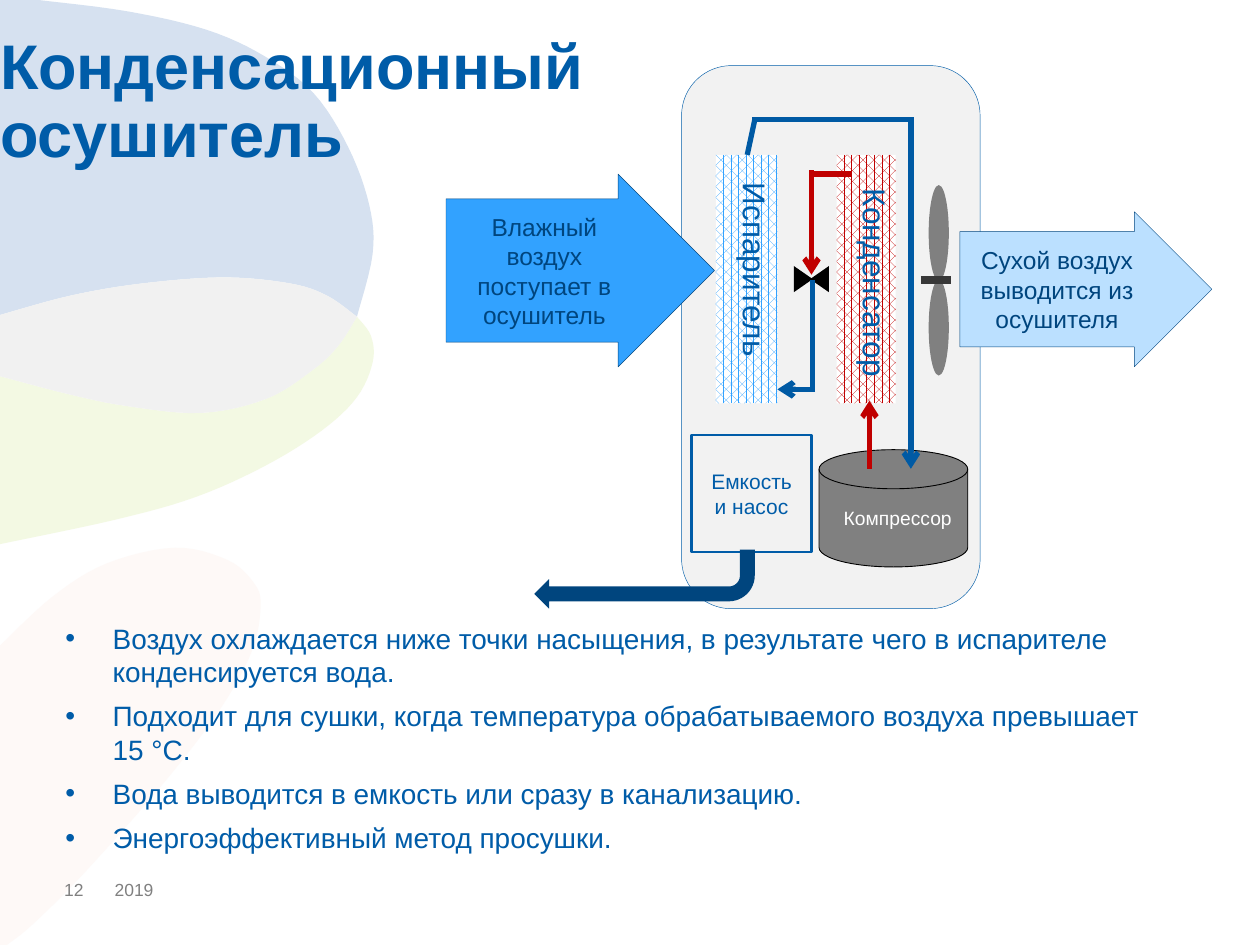
from collections import namedtuple
from dataclasses import dataclass

from lxml.etree import SubElement
from pptx import Presentation
from pptx.dml.color import RGBColor
from pptx.enum.dml import MSO_PATTERN
from pptx.enum.shapes import MSO_CONNECTOR, MSO_SHAPE as Preset
from pptx.enum.text import MSO_ANCHOR as Anchor, MSO_AUTO_SIZE as AutoSize, PP_ALIGN as Align
from pptx.oxml.ns import qn
from pptx.util import Pt

Box = namedtuple("Box", "x y w h")


@dataclass(frozen=True)
class Theme:
    font: str = "Arial"
    blue: str = "005CA8"
    pipe: str = "005AA4"
    navy: str = "00457E"
    moist: str = "32A2FF"
    dry: str = "BBE0FF"
    hot: str = "C00000"
    casing: str = "F2F2F2"
    metal: str = "808080"
    axle: str = "383838"
    black: str = "000000"
    white: str = "FFFFFF"
    petal_blue: str = "D6E1F0"
    petal_green: str = "F3F9E3"
    petal_overlap: str = "F1F1F1"
    petal_pink: str = "FEF9F7"
    title_size: float = 36
    label_size: float = 18
    body_size: float = 16
    flow_size: float = 14
    tank_size: float = 12
    compressor_size: float = 11
    footer_size: float = 10


THEME = Theme()
rgb = RGBColor.from_string


def style_font(paragraph, size, color, bold=False):
    font = paragraph.font
    font.name, font.size, font.bold = THEME.font, Pt(size), bold
    font.color.rgb = rgb(color)


def set_margins(frame, left=0, top=0, right=0, bottom=0):
    frame.margin_left, frame.margin_top = Pt(left), Pt(top)
    frame.margin_right, frame.margin_bottom = Pt(right), Pt(bottom)


def paint(shape, fill=None, line=None, width=0.25):
    shape.shadow.inherit = False
    if fill:
        shape.fill.solid()
        shape.fill.fore_color.rgb = rgb(fill)
    else:
        shape.fill.background()
    if line:
        shape.line.color.rgb, shape.line.width = rgb(line), Pt(width)
    else:
        shape.line.fill.background()


def write(shape, lines, size, color, align=Align.CENTER):
    frame = shape.text_frame
    frame.word_wrap = True
    frame.vertical_anchor = Anchor.MIDDLE
    for i, line in enumerate(lines):
        paragraph = frame.add_paragraph() if i else frame.paragraphs[0]
        paragraph.text, paragraph.alignment = line, align
        style_font(paragraph, size, color)


def add_preset(slide, origin, preset, box, fill=None, line=None, width=0.25, rotation=0):
    """Add a preset shape whose box is measured from the origin box."""
    x, y, w, h = box
    shape = slide.shapes.add_shape(preset, Pt(origin.x + x), Pt(origin.y + y), Pt(w), Pt(h))
    paint(shape, fill, line, width)
    shape.rotation = rotation
    return shape


def add_pipe(slide, origin, start, end, color, arrow=False, width=3):
    (x1, y1), (x2, y2) = start, end
    pipe = slide.shapes.add_connector(
        MSO_CONNECTOR.STRAIGHT, Pt(origin.x + x1), Pt(origin.y + y1),
        Pt(origin.x + x2), Pt(origin.y + y2))
    pipe.line.color.rgb, pipe.line.width = rgb(color), Pt(width)
    if arrow:
        SubElement(pipe.line._get_or_add_ln(), qn("a:tailEnd"), type="arrow")
    SubElement(pipe._element.spPr, qn("a:effectLst"))


def smooth(knots, steps=6):
    """Sample a Catmull-Rom curve through the knots."""
    padded = [knots[0], *knots, knots[-1]]
    curve = [knots[0]]
    for a, b, c, d in zip(padded, padded[1:], padded[2:], padded[3:]):
        for t in (step / steps for step in range(1, steps + 1)):
            curve.append(tuple(
                (2 * q + (r - p) * t + (2 * p - 5 * q + 4 * r - s) * t ** 2
                 + (3 * q - p - 3 * r + s) * t ** 3) / 2
                for p, q, r, s in zip(a, b, c, d)))
    return curve


def add_petals(slide, box):
    crown = smooth([(22, 0), (73, 6.5), (118, 17), (151, 32), (179, 53), (199, 84),
                    (211, 117), (213, 145), (204, 181)])
    upper = smooth([(0, 180), (40, 169), (81, 162), (128, 158.5), (166, 162), (187, 169),
                    (204, 181)])
    lower = smooth([(204, 181), (193, 198), (178, 212), (152, 228), (115, 236), (72, 232),
                    (38, 225), (0, 215)])
    outer = smooth([(204, 181), (212, 192), (213, 207), (204, 227), (184, 246), (152, 266),
                    (112, 284), (66, 297), (0, 311)])
    bottom = smooth([(0, 369), (30, 341), (61, 322), (100, 313), (130, 320), (145, 333),
                     (149, 346), (144, 372), (126, 405), (94, 447), (49, 498), (19, 528),
                     (4, 540)])
    for outline, color in (
            (bottom + [(0, box.h)], THEME.petal_pink),
            (outer + lower[::-1], THEME.petal_green),
            ([(0, 0)] + crown + upper[::-1], THEME.petal_blue),
            (upper + lower, THEME.petal_overlap)):
        points = [(Pt(box.x + x), Pt(box.y + y)) for x, y in outline]
        builder = slide.shapes.build_freeform(*points[0])
        builder.add_line_segments(points[1:], close=True)
        paint(builder.convert_to_shape(), color)


def place(placeholder, box):
    placeholder.left, placeholder.top = Pt(box.x), Pt(box.y)
    placeholder.width, placeholder.height = Pt(box.w), Pt(box.h)
    frame = placeholder.text_frame
    set_margins(frame)
    frame.auto_size, frame.vertical_anchor = AutoSize.NONE, Anchor.TOP
    return frame


def fill_title(slide, box, text):
    paragraph = place(slide.shapes.title, box).paragraphs[0]
    paragraph.text, paragraph.alignment, paragraph.line_spacing = text, Align.LEFT, 0.9
    style_font(paragraph, THEME.title_size, THEME.blue, bold=True)


def fill_bullets(slide, box, items):
    frame = place(slide.placeholders[1], box)
    for i, item in enumerate(items):
        paragraph = frame.add_paragraph() if i else frame.paragraphs[0]
        paragraph.text = item
        paragraph.space_before = Pt(6 if i else 0)
        properties = paragraph._p.get_or_add_pPr()
        properties.set("marL", str(Pt(27)))
        properties.set("indent", str(-Pt(27)))
        SubElement(properties, qn("a:buChar"), char="•")
        style_font(paragraph, THEME.body_size, THEME.blue)


def add_label(slide, box, text, size, color, rotation=0, margins=(0, 0, 0, 0)):
    label = slide.shapes.add_textbox(*map(Pt, box))
    set_margins(label.text_frame, *margins)
    write(label, [text], size, color, Align.LEFT)
    label.rotation = rotation


def add_dehumidifier(slide, box):
    t = THEME
    add_preset(slide, box, Preset.ROUNDED_RECTANGLE, (0, 0, box.w, box.h), t.casing, t.blue)
    for x, rotation in ((62, 90), (71.3, 270)):
        add_preset(slide, box, Preset.ISOSCELES_TRIANGLE, (x, 116.6, 15, 10.8), t.black,
                   rotation=rotation)
    for x, width, color in ((19.5, 35.3, t.moist), (88.6, 33.8, t.hot)):
        coil = add_preset(slide, box, Preset.RECTANGLE, (x, 51, width, 142))
        coil.fill.patterned()
        coil.fill.pattern = MSO_PATTERN.PERCENT_60
        coil.fill.fore_color.rgb, coil.fill.back_color.rgb = rgb(color), rgb(t.white)

    compressor = add_preset(slide, box, Preset.FLOWCHART_MAGNETIC_DISK,
                            (78.5, 219.5, 85, 67), t.metal, t.black, 0.5)
    set_margins(compressor.text_frame, 12, 3.6, 7, 3.6)
    write(compressor, ["Компрессор"], t.compressor_size, t.white)

    for start, end, color, arrow in (
            ((75, 186), (75, 122.4), t.pipe, False),
            ((76.3, 185), (54.7, 185), t.pipe, True),
            ((96.5, 62), (74.2, 62), t.hot, False),
            ((74.2, 59.7), (74.2, 119.5), t.hot, True),
            ((41.8, 31), (37.5, 51), t.pipe, False),
            ((40.3, 31), (132.5, 31), t.pipe, False),
            ((131, 31), (131, 230.4), t.pipe, True),
            ((107.3, 230.4), (107.3, 191.5), t.hot, True)):
        add_pipe(slide, box, start, end, color, arrow)

    for area, color, lines in (
            ((-134.6, 62, 153.4, 110.2), t.moist, ["Влажный воздух", "поступает в осушитель"]),
            ((159, 83.5, 144, 88.6), t.dry, ["Сухой воздух", "выводится из осушителя"])):
        flow = add_preset(slide, box, Preset.RIGHT_ARROW, area, color, t.navy)
        flow.adjustments[0], flow.adjustments[1] = 0.743, 0.5
        write(flow, lines, t.flow_size, t.navy)

    tank = add_preset(slide, box, Preset.RECTANGLE, (5.8, 211, 68.4, 67), None, t.blue, 1.5)
    write(tank, ["Емкость и насос"], t.tank_size, t.blue)
    add_preset(slide, box, Preset.BENT_ARROW, (-84.2, 276.5, 126, 33.8), t.navy, rotation=180)

    for y in (68.3, 122.4):
        add_preset(slide, box, Preset.OVAL, (141.2, y, 11.5, 54.7), t.metal)
    add_pipe(slide, box, (136.8, 122.4), (154, 122.4), t.axle, width=4.5)

    for x, y, width, text in ((-16.5, 104.3, 117.4, "Испаритель"),
                              (46, 113.7, 129.6, "Конденсатор")):
        add_label(slide, Box(box.x + x, box.y + y, width, 28.8), text, t.label_size, t.blue,
                  rotation=90, margins=(7.2, 3.6, 7.2, 3.6))


def add_footer(slide, box):
    for x, text in ((0, "12"), (28.8, "2019")):
        add_label(slide, Box(box.x + x, box.y, box.w - x, box.h), text, THEME.footer_size,
                  THEME.metal)


def main():
    deck = Presentation()
    deck.slide_width, deck.slide_height = Pt(720), Pt(540)
    slide = deck.slides.add_slide(deck.slide_layouts[1])
    add_petals(slide, Box(0, 0, 214, 540))
    # The petals lie behind the title and the list.
    for placeholder in list(slide.placeholders):
        slide.shapes._spTree.append(placeholder._element)
    add_footer(slide, Box(36.7, 502.5, 96, 11.2))
    fill_title(slide, Box(0, 20, 648, 90.7), "Конденсационный\nосушитель")
    fill_bullets(slide, Box(37.4, 355, 646, 113), [
        "Воздух охлаждается ниже точки насыщения, в результате чего в испарителе "
        "конденсируется вода.",
        "Подходит для сушки, когда температура обрабатываемого воздуха превышает\n15 °С.",
        "Вода выводится в емкость или сразу в канализацию.",
        "Энергоэффективный метод просушки.",
    ])
    add_dehumidifier(slide, Box(389.5, 37.5, 170.6, 310.3))
    deck.save("out.pptx")


if __name__ == "__main__":
    main()
